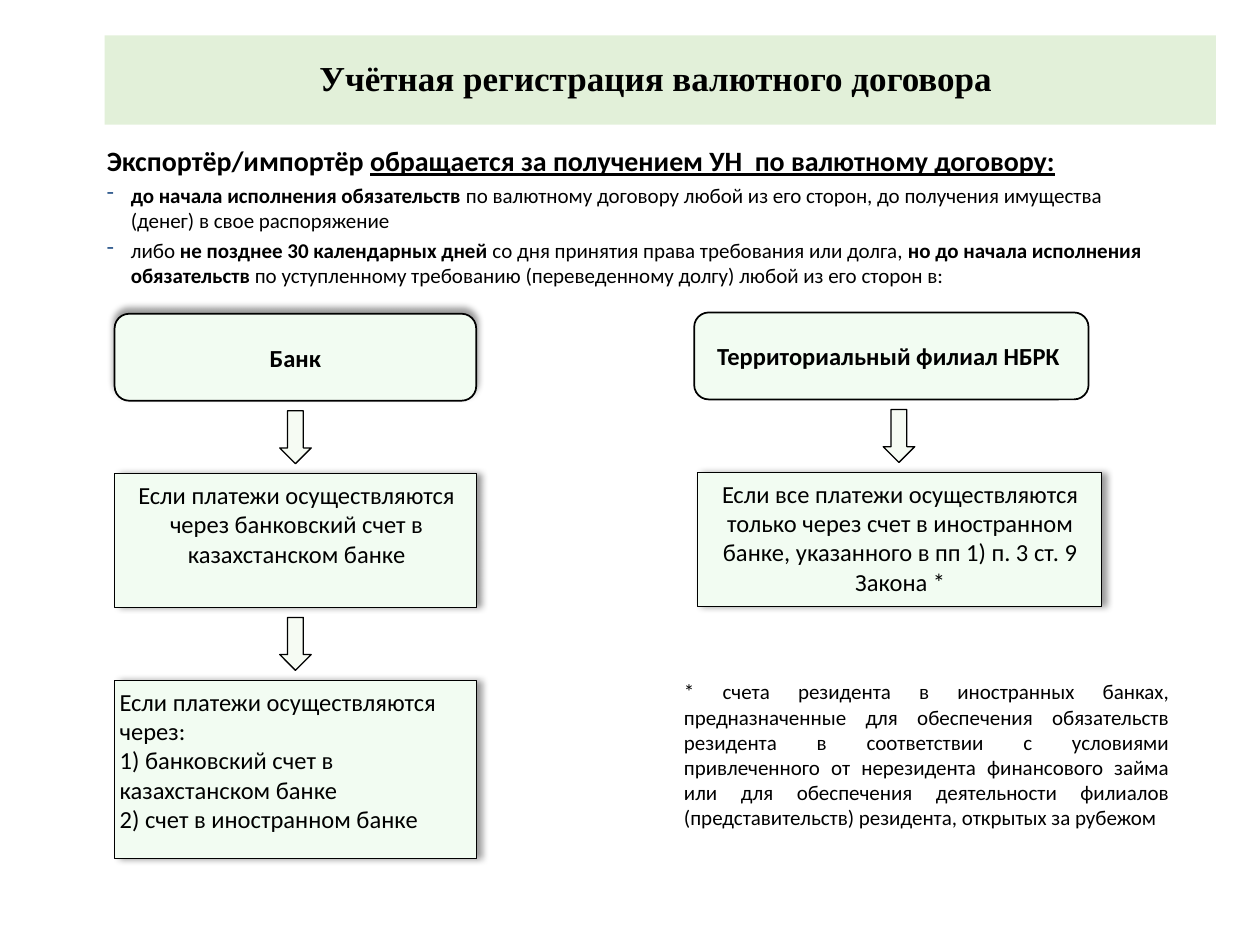
import pptx
import pptx.dml.color
import pptx.enum.shapes
import pptx.enum.text
import pptx.oxml
import pptx.oxml.ns
import pptx.util

Pt = pptx.util.Pt
SHAPE = pptx.enum.shapes.MSO_SHAPE
ALIGN = pptx.enum.text.PP_ALIGN
ANCHOR = pptx.enum.text.MSO_ANCHOR

UNIT = pptx.util.Inches(0.1)  # the slide is a grid of 100 columns by 75 rows
COLUMNS, ROWS = 100, 75
BLACK, MINT, PALE, BANNER, DASH = "000000", "F2FCF2", "F6FBF3", "E2F0D9", "376092"
BODY_FONT, TITLE_FONT = "Calibri", "Times New Roman"
GAP, ARROW_WIDTH, ARROW_HEIGHT = 0.8, 2.5, 4.2


def grid(count):
    return round(count * UNIT)


def color(value):
    return pptx.dml.color.RGBColor.from_string(value)


def add_element(parent, xml):
    namespace = pptx.oxml.ns.nsdecls("a")
    tag, rest = xml.split(" ", 1)
    parent.append(pptx.oxml.parse_xml(f"<{tag} {namespace} {rest}"))


def add_runs(paragraph, runs, size, font=BODY_FONT):
    """Each run is its text and a string of styles: b for bold, u for underline."""
    for words, style in runs:
        run = paragraph.add_run()
        run.text = words
        run.font.name, run.font.size = font, Pt(size)
        run.font.bold, run.font.underline = "b" in style, "u" in style
        run.font.color.rgb = color(BLACK)


def add_panel(slide, kind, box, fill, line=None, shadow=None):
    """Draw a filled shape; shadow is the direction of the shadow in degrees."""
    panel = slide.shapes.add_shape(kind, *map(grid, box))
    panel.fill.solid()
    panel.fill.fore_color.rgb = color(fill)
    if line is None:
        panel.line.fill.background()
    else:
        panel.line.color.rgb = color(BLACK)
        panel.line.width = Pt(line)
    panel.shadow.inherit = False
    if shadow is not None:
        effects = panel._element.spPr.find(pptx.oxml.ns.qn("a:effectLst"))
        add_element(effects, f'a:outerShdw blurRad="{Pt(4)}" dist="{Pt(3)}" dir="{shadow * 60000}" '
                    'algn="ctr" rotWithShape="0"><a:srgbClr val="000000">'
                    '<a:alpha val="40000"/></a:srgbClr></a:outerShdw>')
    return panel


def write_panel(panel, lines, size, style="", align=ALIGN.CENTER, anchor=ANCHOR.MIDDLE, font=BODY_FONT):
    frame = panel.text_frame
    frame.word_wrap = True
    frame.vertical_anchor = anchor
    for index, words in enumerate(lines):
        paragraph = frame.add_paragraph() if index else frame.paragraphs[0]
        paragraph.alignment = align
        add_runs(paragraph, [(words, style)], size, font)
    return frame


def add_title(slide, box, words):
    banner = add_panel(slide, SHAPE.RECTANGLE, box, BANNER)
    frame = write_panel(banner, [words], 20, "b", font=TITLE_FONT)
    frame.paragraphs[0].line_spacing = 0.9


def add_intro(slide, box, heading, conditions):
    frame = slide.shapes.add_textbox(*map(grid, box)).text_frame
    frame.word_wrap = True
    add_runs(frame.paragraphs[0], heading, 16)
    for runs in conditions:
        paragraph = frame.add_paragraph()
        properties = paragraph._p.get_or_add_pPr()
        properties.set("marL", str(grid(1.9)))
        properties.set("indent", str(grid(-1.9)))
        add_element(properties, f'a:buClr ><a:srgbClr val="{DASH}"/></a:buClr>')
        add_element(properties, 'a:buChar char="-"/>')
        paragraph.space_before = Pt(2.8)
        add_runs(paragraph, runs, 12)


def add_branch(slide, header_box, header, header_shadow, step_left, step_width, steps):
    """Stack the header and its steps, with an arrow above each step."""
    head = add_panel(slide, SHAPE.ROUNDED_RECTANGLE, header_box, MINT, 1, header_shadow)
    write_panel(head, [header], 14, "b")
    bottom = header_box[1] + header_box[3]
    for lines, height, align in steps:
        arrow_left = step_left + (step_width - ARROW_WIDTH) / 2
        arrow_top = bottom + GAP
        add_panel(slide, SHAPE.DOWN_ARROW, (arrow_left, arrow_top, ARROW_WIDTH, ARROW_HEIGHT), PALE, 0.75)
        top = arrow_top + ARROW_HEIGHT + GAP
        step = add_panel(slide, SHAPE.RECTANGLE, (step_left, top, step_width, height), MINT, 0.25, 0)
        frame = write_panel(step, lines, 14, align=align, anchor=ANCHOR.TOP)
        frame.margin_left, frame.margin_right = grid(0.4), grid(0.2)
        bottom = top + height


def add_footnote(slide, box, words):
    note = slide.shapes.add_textbox(*map(grid, box))
    frame = write_panel(note, [words], 12, align=ALIGN.JUSTIFY, anchor=ANCHOR.TOP)
    frame.paragraphs[0]._p.get_or_add_pPr().set("marL", str(grid(0.9)))


def main():
    deck = pptx.Presentation()
    deck.slide_width, deck.slide_height = grid(COLUMNS), grid(ROWS)
    slide = deck.slides.add_slide(deck.slide_layouts[6])

    # Title and the terms of registration
    add_title(slide, (8.3, 2.8, 88.2, 7.1), "Учётная регистрация валютного договора ")
    add_intro(
        slide, (7.5, 10.9, 85.4, 12.5),
        [("Экспортёр/импортёр ", "b"), ("обращается за получением УН  по валютному договору:", "bu")],
        [
            [("до начала исполнения обязательств ", "b"),
             ("по валютному договору любой из его сторон, до получения имущества (денег) "
              "в свое распоряжение", "")],
            [("либо ", ""),
             ("не позднее 30 календарных дней ", "b"),
             ("со дня принятия права требования или долга, ", ""),
             ("но до начала исполнения обязательств ", "b"),
             ("по уступленному требованию (переведенному долгу) любой из его сторон в:", "")],
        ])

    # Bank branch on the left
    add_branch(
        slide, (9.1, 24.9, 28.7, 6.9), "Банк", 270, 9.1, 28.7,
        [
            (["Если платежи осуществляются через банковский счет в казахстанском банке"],
             10.6, ALIGN.CENTER),
            (["Если платежи осуществляются через:",
              "1) банковский счет в казахстанском банке",
              "2) счет в иностранном банке"], 14.1, ALIGN.LEFT),
        ])

    # Regional office branch on the right, with its footnote
    add_branch(
        slide, (55.1, 24.8, 31.3, 6.9), "Территориальный филиал НБРК ", None, 55.3, 32.1,
        [(["Если все платежи осуществляются только через счет в иностранном банке, "
           "указанного в пп 1) п. 3 ст. 9 Закона *"], 10.6, ALIGN.CENTER)])
    add_footnote(
        slide, (52.4, 53.4, 41.4, 14.7),
        "* счета резидента в иностранных банках, предназначенные для обеспечения обязательств "
        "резидента в соответствии с условиями привлеченного от нерезидента финансового займа "
        "или для обеспечения деятельности филиалов (представительств) резидента, "
        "открытых за рубежом ")

    deck.save("out.pptx")


if __name__ == "__main__":
    main()
